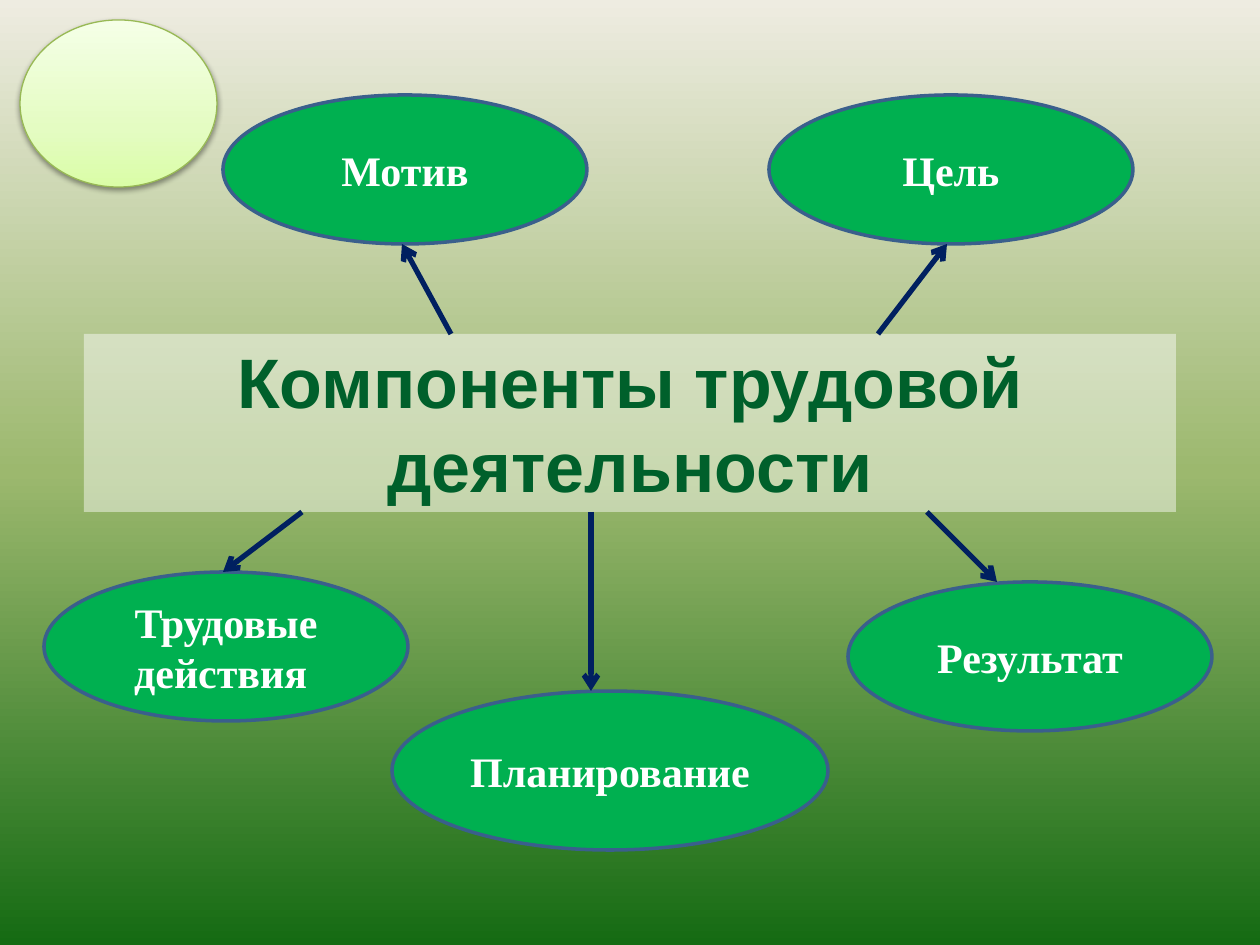
from lxml import etree
from pptx import Presentation
from pptx.dml.color import RGBColor
from pptx.enum.shapes import MSO_CONNECTOR, MSO_SHAPE
from pptx.enum.text import MSO_ANCHOR, PP_ALIGN
from pptx.oxml.ns import qn
from pptx.util import Pt

PX = 914400 / 126
OVAL = MSO_SHAPE.OVAL
RECTANGLE = MSO_SHAPE.RECTANGLE
STRAIGHT = MSO_CONNECTOR.STRAIGHT
CENTER = PP_ALIGN.CENTER
MIDDLE = MSO_ANCHOR.MIDDLE

WHITE = RGBColor(0xFF, 0xFF, 0xFF)
TITLE_GREEN = RGBColor(0x00, 0x60, 0x2B)
OVAL_GREEN = RGBColor(0x00, 0xB0, 0x50)
OVAL_EDGE = RGBColor(0x3A, 0x5F, 0x8C)
CIRCLE_EDGE = RGBColor(0x98, 0xB9, 0x55)
NAVY = RGBColor(0x00, 0x20, 0x60)
BLACK = RGBColor(0x00, 0x00, 0x00)
PAGE_STOPS = [
    (0, RGBColor(0xEE, 0xEC, 0xE1)),
    (50, RGBColor(0x9C, 0xB8, 0x6E)),
    (100, RGBColor(0x15, 0x6B, 0x13)),
]
CIRCLE_STOPS = [
    (0, RGBColor(0xDA, 0xFD, 0xA7)),
    (35, RGBColor(0xE4, 0xFC, 0xC2)),
    (100, RGBColor(0xF5, 0xFF, 0xE7)),
]

COMPONENTS = [
    ("Мотив", 223, 95, 364, 149),
    ("Цель", 769, 95, 364, 149),
    ("Планирование", 392, 691, 436, 159),
    ("Трудовые действия ", 44, 572, 364, 149),
    ("Результат", 848, 582, 364, 149),
]
ARROWS = [
    (302, 512, 223, 572),
    (927, 512, 997, 582),
    (451, 334, 402, 244),
    (878, 334, 947, 244),
    (591, 512, 591, 691),
]


def px(*lengths):
    """Turn pixel lengths into EMU."""
    return [round(length * PX) for length in lengths]


def add_color(parent, color, alpha=None):
    """Append a colour element, with an optional opacity in percent."""
    element = etree.SubElement(parent, qn("a:srgbClr"), val=str(color))
    if alpha is not None:
        etree.SubElement(element, qn("a:alpha"), val=str(alpha * 1000))


def paint_gradient(owner, fill, stops, angle):
    """Give the owner's fill a linear gradient of any number of stops."""
    fill.gradient()
    fill.gradient_angle = angle
    stop_list = owner.element.find(".//" + qn("a:gsLst"))
    for stop in list(stop_list):
        stop_list.remove(stop)
    for position, color in stops:
        stop = etree.SubElement(stop_list, qn("a:gs"), pos=str(position * 1000))
        add_color(stop, color)


def add_plain_shape(page, kind, bounds):
    """Add a preset shape without a shadow."""
    shape = page.shapes.add_shape(kind, *px(*bounds))
    shape.shadow.inherit = False
    return shape


def set_outline(shape, color, width):
    """Set the line colour and width of a shape or connector."""
    shape.line.color.rgb = color
    shape.line.width = Pt(width)


def write_text(shape, text, font_name, size, color):
    """Write one bold centred paragraph into a shape."""
    frame = shape.text_frame
    frame.word_wrap = True
    frame.vertical_anchor = MIDDLE
    paragraph = frame.paragraphs[0]
    paragraph.text = text
    paragraph.alignment = CENTER
    font = paragraph.font
    font.name = font_name
    font.size = Pt(size)
    font.bold = True
    font.color.rgb = color


def add_corner_circle(page):
    """Add the pale circle with its soft shadow."""
    circle = add_plain_shape(page, OVAL, (20, 20, 197, 167))
    paint_gradient(circle, circle.fill, CIRCLE_STOPS, 90)
    set_outline(circle, CIRCLE_EDGE, 0.75)
    effects = circle.element.spPr.find(qn("a:effectLst"))
    shadow = etree.SubElement(
        effects, qn("a:outerShdw"), blurRad=str(Pt(3.1)), dist=str(Pt(1.6)),
        dir="5400000", rotWithShape="0")
    add_color(shadow, BLACK, 38)


def add_title(page, text):
    """Add the translucent title band."""
    band = add_plain_shape(page, RECTANGLE, (84, 334, 1092, 178))
    band.fill.solid()
    band.fill.fore_color.rgb = WHITE
    color = band.element.spPr.find(qn("a:solidFill"))[0]
    etree.SubElement(color, qn("a:alpha"), val="46000")
    band.line.fill.background()
    write_text(band, text, "Arial", 40, TITLE_GREEN)


def add_component(page, text, *bounds):
    """Add one labelled green oval."""
    oval = add_plain_shape(page, OVAL, bounds)
    oval.fill.solid()
    oval.fill.fore_color.rgb = OVAL_GREEN
    set_outline(oval, OVAL_EDGE, 2)
    write_text(oval, text, "Times New Roman", 24, WHITE)


def add_arrow(page, *ends):
    """Add an arrow from the title band to an oval."""
    arrow = page.shapes.add_connector(STRAIGHT, *px(*ends))
    set_outline(arrow, NAVY, 3)
    etree.SubElement(arrow.line._get_or_add_ln(), qn("a:tailEnd"), type="arrow")
    etree.SubElement(arrow.element.spPr, qn("a:effectLst"))


def main():
    """Build and save the slide."""
    deck = Presentation()
    deck.slide_width, deck.slide_height = px(1260, 945)
    page = deck.slides.add_slide(deck.slide_layouts[6])
    paint_gradient(page, page.background.fill, PAGE_STOPS, 270)
    add_corner_circle(page)
    add_title(page, "Компоненты трудовой деятельности")
    for component in COMPONENTS:
        add_component(page, *component)
    for ends in ARROWS:
        add_arrow(page, *ends)
    deck.save("out.pptx")


if __name__ == "__main__":
    main()
